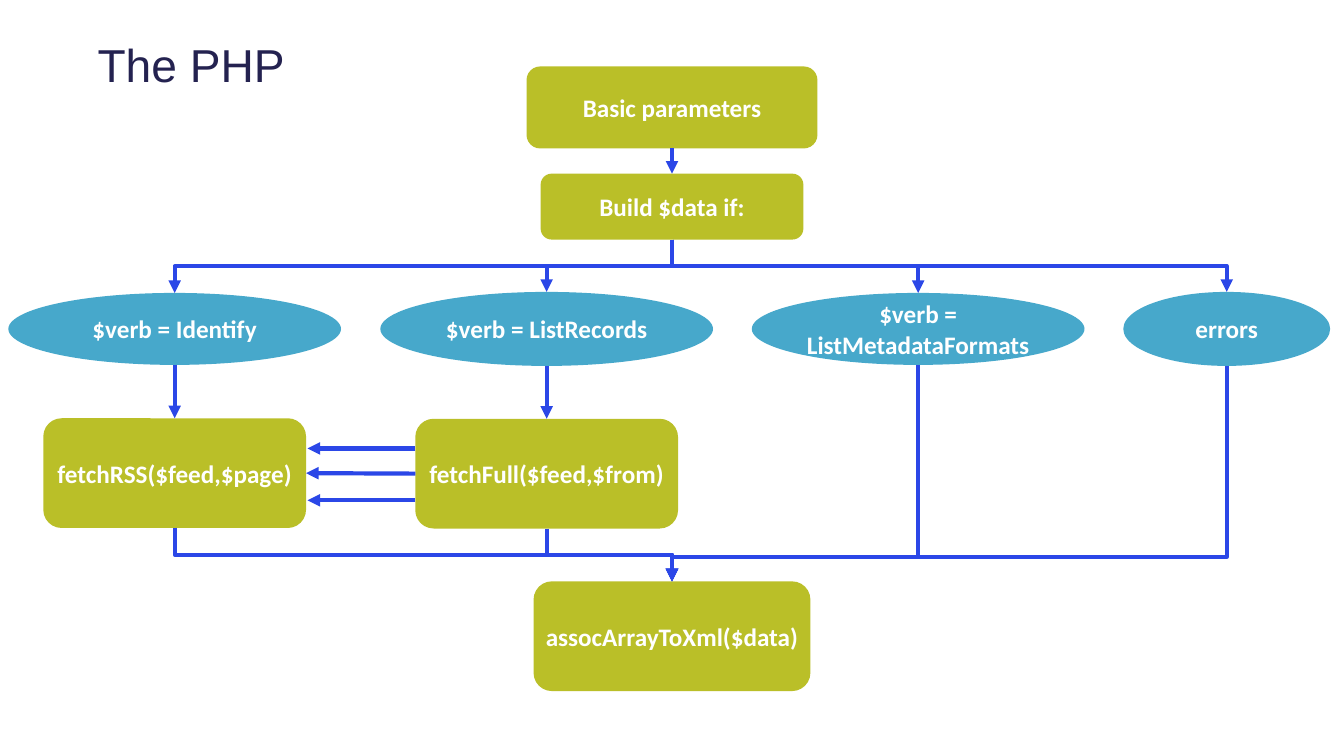
from dataclasses import dataclass

from lxml import etree
from pptx import Presentation
from pptx.dml.color import RGBColor
from pptx.enum.shapes import MSO_CONNECTOR, MSO_SHAPE
from pptx.enum.text import MSO_ANCHOR, PP_ALIGN
from pptx.oxml.ns import qn
from pptx.shapes.autoshape import Shape
from pptx.shapes.connector import Connector
from pptx.slide import Slide
from pptx.util import Inches, Pt

ROUND, OVAL = MSO_SHAPE.ROUNDED_RECTANGLE, MSO_SHAPE.OVAL
STRAIGHT, ELBOW = MSO_CONNECTOR.STRAIGHT, MSO_CONNECTOR.ELBOW
MIDDLE, CENTER = MSO_ANCHOR.MIDDLE, PP_ALIGN.CENTER
TOP, LEFT, BOTTOM, RIGHT = range(4)


@dataclass(frozen=True)
class Theme:
    ink: RGBColor = RGBColor.from_string("242250")
    green: RGBColor = RGBColor.from_string("BABF28")
    blue: RGBColor = RGBColor.from_string("47A8CB")
    line: RGBColor = RGBColor.from_string("2B47E7")
    white: RGBColor = RGBColor.from_string("FFFFFF")
    head: str = "Arial"
    body: str = "Calibri"
    title: int = 66
    label: int = 36
    stroke: int = 6


@dataclass(frozen=True)
class Node:
    text: str
    mid: float
    top: float
    width: float
    height: float
    oval: bool = False

    @property
    def base(self) -> float:
        return self.top + self.height


THEME = Theme()
AXIS = 13.35
BASIC = Node("Basic parameters", AXIS, 1.32, 5.78, 1.63)
BUILD = Node("Build $data if:", AXIS, 3.45, 5.22, 1.31)
IDENT = Node("$verb = Identify", 3.47, 5.82, 6.61, 1.43, True)
LIST = Node("$verb = ListRecords", 10.86, 5.8, 6.61, 1.47, True)
META = Node("$verb = ListMetadataFormats", 18.24, 5.82, 6.61, 1.43, True)
ERROR = Node("errors", 24.37, 5.8, 4.11, 1.47, True)
RSS = Node("fetchRSS($feed,$page)", 3.47, 8.31, 5.22, 2.18)
FULL = Node("fetchFull($feed,$from)", 10.86, 8.32, 5.22, 2.18)
XML = Node("assocArrayToXml($data)", AXIS, 11.55, 5.5, 2.18)
TESTS = (IDENT, LIST, META, ERROR)
NODES = (BASIC, BUILD, *TESTS, RSS, FULL, XML)
SPLIT = 5.29
JOINS = ((RSS, 11.02), (FULL, 11.02), (META, 11.06), (ERROR, 11.06))


def add_title(slide: Slide, text: str) -> None:
    box = slide.shapes.add_textbox(Inches(1.84), Inches(0.8), Inches(22.08), Inches(2.9))
    box.text_frame.word_wrap = True
    box.text_frame.text = text
    para = box.text_frame.paragraphs[0]
    para.line_spacing = 0.9
    font = para.runs[0].font
    font.name, font.size, font.color.rgb = THEME.head, Pt(THEME.title), THEME.ink


def add_node(slide: Slide, node: Node) -> Shape:
    shape = slide.shapes.add_shape(
        OVAL if node.oval else ROUND,
        Inches(node.mid - node.width / 2), Inches(node.top),
        Inches(node.width), Inches(node.height),
    )
    shape.shadow.inherit = False
    shape.fill.solid()
    shape.fill.fore_color.rgb = THEME.blue if node.oval else THEME.green
    shape.line.fill.background()
    frame = shape.text_frame
    frame.word_wrap = True
    frame.vertical_anchor = MIDDLE
    frame.text = node.text
    para = frame.paragraphs[0]
    para.alignment = CENTER
    font = para.runs[0].font
    font.name, font.size, font.bold = THEME.body, Pt(THEME.label), True
    font.color.rgb = THEME.white
    return shape


def style(link: Connector) -> None:
    link.line.color.rgb = THEME.line
    link.line.width = Pt(THEME.stroke)
    etree.SubElement(link.line._get_or_add_ln(), qn("a:tailEnd"), type="triangle")
    etree.SubElement(link._element.spPr, qn("a:effectLst"))


def add_arrow(slide: Slide, x1: float, y1: float, x2: float, y2: float) -> Connector:
    link = slide.shapes.add_connector(STRAIGHT, Inches(x1), Inches(y1), Inches(x2), Inches(y2))
    style(link)
    return link


def add_elbow(slide: Slide, start: Node, end: Node, rail: float) -> None:
    """Draw a down-across-down arrow as a turned elbow that crosses at rail."""
    drop, span = end.top - start.base, abs(end.mid - start.mid)
    left = (start.mid + end.mid - drop) / 2
    top = (start.base + end.top - span) / 2
    link = slide.shapes.add_connector(
        ELBOW, Inches(left), Inches(top), Inches(left + drop), Inches(top + span)
    )
    props = link._element.spPr
    frame = props.find(qn("a:xfrm"))
    right = end.mid > start.mid
    frame.set("rot", str((270 if right else 90) * 60000))
    frame.set("flipH", str(int(right)))
    guides = props.find(qn("a:prstGeom")).find(qn("a:avLst"))
    ratio = round((rail - start.base) / drop * 100000)
    etree.SubElement(guides, qn("a:gd"), name="adj1", fmla=f"val {ratio}")
    style(link)


def main() -> None:
    deck = Presentation()
    deck.slide_width, deck.slide_height = Inches(26.7), Inches(15)
    slide = deck.slides.add_slide(deck.slide_layouts[6])
    add_title(slide, "The PHP")
    shapes = {node: add_node(slide, node) for node in NODES}

    for start, end in ((BASIC, BUILD), (IDENT, RSS), (LIST, FULL)):
        link = add_arrow(slide, start.mid, start.base, end.mid, end.top)
        if not start.oval:
            link.begin_connect(shapes[start], BOTTOM)
        link.end_connect(shapes[end], TOP)

    near, far = FULL.mid - FULL.width / 2, RSS.mid + RSS.width / 2
    link = add_arrow(slide, near, 9.4, far, 9.4)
    link.begin_connect(shapes[FULL], LEFT)
    link.end_connect(shapes[RSS], RIGHT)
    for y in (8.91, 9.94):
        add_arrow(slide, near, y, far + 0.03, y)

    for node in TESTS:
        add_elbow(slide, BUILD, node, SPLIT)
    for node, rail in JOINS:
        add_elbow(slide, node, XML, rail)
    deck.save("out.pptx")


if __name__ == "__main__":
    main()
